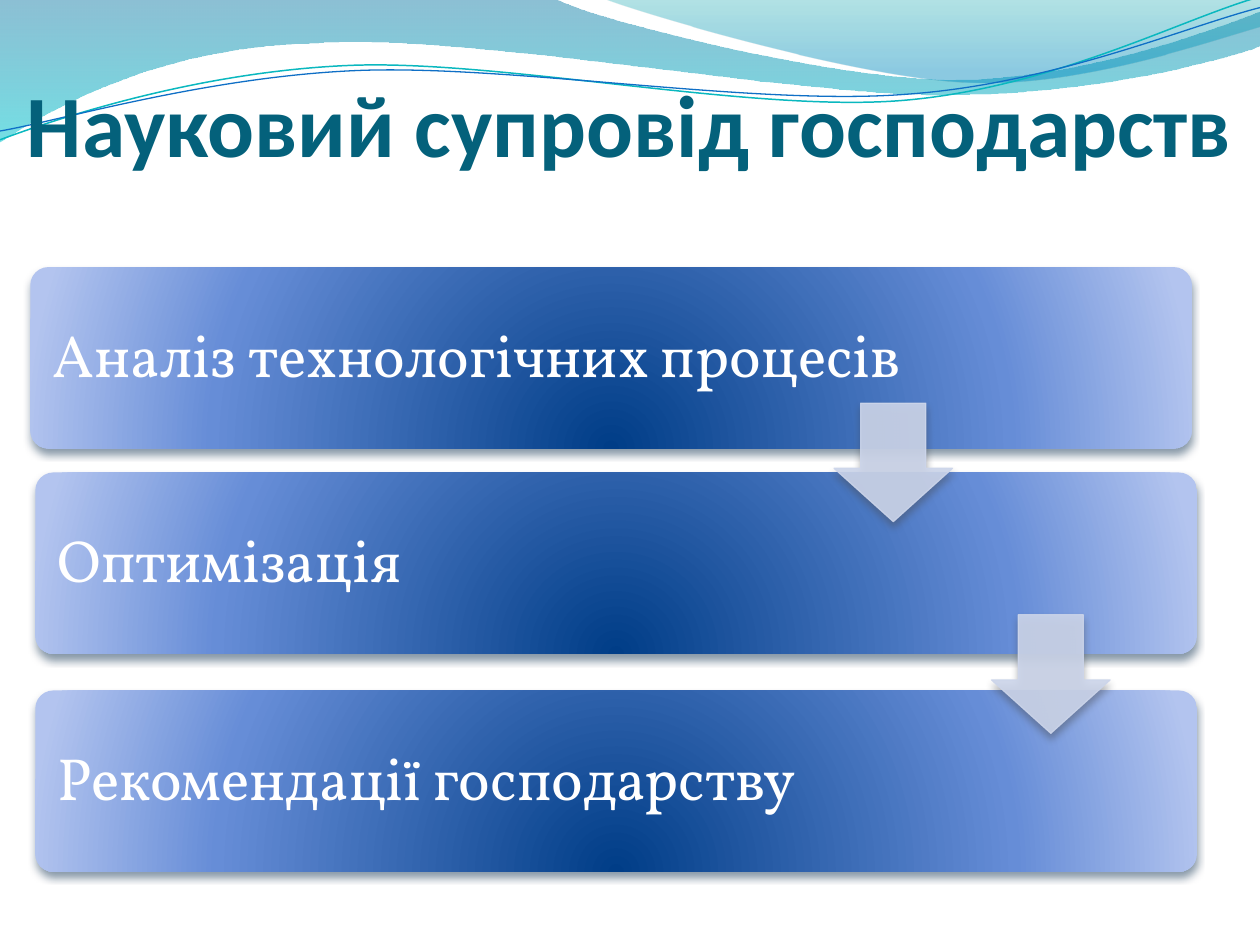
from math import cos, radians, sin

from lxml import etree
from pptx import Presentation
from pptx.dml.color import RGBColor as RGB
from pptx.enum.shapes import MSO_SHAPE as SHAPE
from pptx.enum.text import MSO_ANCHOR as ANCHOR, MSO_AUTO_SIZE as SIZE, PP_ALIGN as ALIGN
from pptx.oxml import parse_xml
from pptx.oxml.ns import nsdecls, qn
from pptx.util import Inches, Pt

WHITE = RGB(0xFF, 0xFF, 0xFF)
TITLE = RGB(0x04, 0x61, 0x7B)
ARROW = RGB(0xCC, 0xD5, 0xEA)
TEAL = RGB(0x0A, 0xB8, 0xBF)
BLUE = RGB(0x0F, 0x6F, 0xC6)
BAR_DARK = RGB(0x00, 0x3D, 0x87)
BAR_MID = RGB(0x66, 0x8D, 0xD7)
BAR_PALE = RGB(0xB3, 0xC4, 0xEF)
BAR_SHADE = RGB(0x04, 0x27, 0x47)
ARROW_SHADE = RGB(0x47, 0x4B, 0x53)

DOWN = '<a:lin ang="5400000" scaled="0"/>'
GLOW = ('<a:path path="circle"><a:fillToRect l="50000" t="130000" '
        'r="50000" b="-30000"/></a:path>')
BAR_STOPS = [(0, BAR_DARK, 100), (68, BAR_MID, 100), (100, BAR_PALE, 100)]
TURN = 357.3

# Each wave: box, then start point, cubic curves (6 numbers) or lines (2).
WAVES = [
    ((-0.01, -0.01, 10.02, 1.14),
     [(0, 0), (4.4, -0.01), (4.76, 0.17, 6.64, 0.63, 7.58, 0.63),
      (8.53, 0.63, 9.58, 0.26, 10, 0.09), (10.01, 0.36),
      (9.83, 0.44, 8.7, 0.76, 7.46, 0.75), (6.22, 0.75, 3.82, 0.28, 2.57, 0.34),
      (1.29, 0.36, 0.46, 0.83, -0.01, 1.13), (0, 0)],
     [(0, RGB(0x00, 0x74, 0xA1), 45), (100, RGB(0x00, 0xC6, 0xCF), 55)]),
    ((4.79, -0.01, 5.21, 0.7),
     [(4.79, -0.01), (5.09, 0.11, 6.82, 0.62, 7.69, 0.65),
      (8.56, 0.69, 9.61, 0.32, 10, 0.21), (10, 0), (4.79, -0.01)],
     [(0, RGB(0x00, 0xA1, 0xA9), 30), (80, RGB(0x00, 0x8B, 0xBF), 45)]),
]
LINES = [
    ((-0.02, 0.22, 10.02, 0.71),
     [(0, 1.11), (0.48, 0.93, 1.58, 0.57, 2.77, 0.52),
      (3.95, 0.47, 5.93, 0.89, 7.13, 0.8), (8.33, 0.71, 9.38, 0.15, 9.98, -0.02)],
     TEAL, 0.85),
    ((-0.02, 0.3, 10.03, 0.58),
     [(0, 1.04), (0.47, 0.96, 1.64, 0.61, 2.83, 0.56),
      (4.03, 0.51, 5.97, 0.84, 7.17, 0.75), (8.36, 0.67, 9.41, 0.21, 10, 0.06)],
     BLUE, 0.75),
]
STEPS = [  # left, top, text width, words
    (0.24, 2.12, 7.41, "Аналіз технологічних процесів"),
    (0.28, 3.75, 7.23, "Оптимізація"),
    (0.28, 5.48, 7.23, "Рекомендації господарству"),
]
ARROWS = [(6.62, 3.2), (7.87, 4.88)]


def style(obj, **vals):
    for name, val in vals.items():
        setattr(obj, name, val)


def blend(shape, stops, way):
    """Fill with a gradient of (position, colour, opacity) stops."""
    marks = "".join(
        f'<a:gs pos="{pos * 1000}"><a:srgbClr val="{hue}">'
        f'<a:alpha val="{alpha * 1000}"/></a:srgbClr></a:gs>'
        for pos, hue, alpha in stops)
    shape.fill.background()
    props = shape.element.spPr
    props.replace(props.find(qn("a:noFill")), parse_xml(
        f'<a:gradFill {nsdecls("a")} rotWithShape="1"><a:gsLst>{marks}</a:gsLst>'
        f'{way}</a:gradFill>'))


def shade(shape, hue):
    """Give the soft shadow that falls straight down."""
    shape.shadow.inherit = False
    shape.element.spPr.find(qn("a:effectLst")).append(parse_xml(
        f'<a:outerShdw {nsdecls("a")} blurRad="{Pt(4.5)}" dist="{Pt(3)}" '
        f'dir="5400000" rotWithShape="0"><a:srgbClr val="{hue}">'
        f'<a:alpha val="48000"/></a:srgbClr></a:outerShdw>'))


def outline(shapes, box, path, close, turn=0):
    """Draw a curved outline in its box; points are given as turned on the slide."""
    left, top, wide, high = box
    ca, sa = cos(radians(turn)), sin(radians(turn))

    def local(x, y):
        dx, dy = x - left - wide / 2, y - top - high / 2
        return Inches(dx * ca + dy * sa + wide / 2), Inches(dy * ca - dx * sa + high / 2)

    pen = shapes.build_freeform(0, 0)
    pen.add_line_segments([(Inches(wide), Inches(high))], close=close)
    shape = pen.convert_to_shape()
    style(shape, left=Inches(left), top=Inches(top), width=Inches(wide),
          height=Inches(high), rotation=turn)
    shape.shadow.inherit = False
    track = next(shape.element.spPr.iter(qn("a:path")))
    for old in track.findall(qn("a:lnTo")):
        track.remove(old)
    start = track.find(qn("a:moveTo"))[0]
    for key, val in zip("xy", local(*path[0])):
        start.set(key, str(val))
    spot = 1
    for part in path[1:]:
        node = etree.Element(qn("a:lnTo" if len(part) == 2 else "a:cubicBezTo"))
        for x, y in zip(part[::2], part[1::2]):
            px, py = local(x, y)
            etree.SubElement(node, qn("a:pt"), x=str(px), y=str(py))
        track.insert(spot, node)
        spot += 1
    return shape


def add_waves(shapes):
    for box, path, stops in WAVES:
        wave = outline(shapes, box, path, True)
        blend(wave, stops, DOWN)
        wave.line.fill.background()
    for box, path, hue, width in LINES:
        curve = outline(shapes, box, path, False, TURN)
        curve.fill.background()
        curve.line.color.rgb = hue
        curve.line.width = Pt(width)


def add_step(shapes, left, top, wide, words):
    bar = shapes.add_shape(SHAPE.ROUNDED_RECTANGLE, left, top, Inches(9.22), Inches(1.44))
    bar.adjustments[0] = 0.1
    blend(bar, BAR_STOPS, GLOW)
    bar.line.fill.background()
    shade(bar, BAR_SHADE)
    gap = Inches(0.04)
    frame = shapes.add_textbox(left + gap, top + gap, wide, Inches(1.36)).text_frame
    pad = Inches(0.14)
    style(frame, word_wrap=True, vertical_anchor=ANCHOR.MIDDLE, margin_left=pad,
          margin_right=pad, margin_top=pad, margin_bottom=pad)
    para = frame.paragraphs[0]
    style(para, text=words, line_spacing=0.9)
    font = para.runs[0].font
    style(font, size=Pt(34), name="Vollkorn")
    font.color.rgb = WHITE


def add_arrow(shapes, left, top):
    side = Inches(0.94)
    arrow = shapes.add_shape(SHAPE.DOWN_ARROW, left, top, side, side)
    arrow.adjustments[0], arrow.adjustments[1] = 0.55, 0.45
    arrow.fill.solid()
    arrow.fill.fore_color.rgb = ARROW
    arrow.line.color.rgb = ARROW
    arrow.line.width = Pt(0.75)
    for hue in arrow.element.spPr.iter(qn("a:srgbClr")):
        etree.SubElement(hue, qn("a:alpha")).set("val", "90000")
    shade(arrow, ARROW_SHADE)


def set_title(shapes, left, top, wide, high, words):
    title = shapes.title
    style(title, left=left, top=top, width=wide, height=high)
    frame = title.text_frame
    style(frame, auto_size=SIZE.NONE, word_wrap=True, vertical_anchor=ANCHOR.BOTTOM,
          margin_left=0, margin_right=0, margin_top=Inches(0.05), margin_bottom=0)
    para = frame.paragraphs[0]
    style(para, text=words, alignment=ALIGN.CENTER)
    font = para.runs[0].font
    style(font, size=Pt(50), name="Calibri", bold=True)
    font.color.rgb = TITLE
    title.element.getparent().append(title.element)  # bring to front


def main():
    deck = Presentation()
    style(deck, slide_width=Inches(10), slide_height=Inches(7.5))
    shapes = deck.slides.add_slide(deck.slide_layouts[5]).shapes
    add_waves(shapes)
    for left, top, wide, words in STEPS:
        add_step(shapes, Inches(left), Inches(top), Inches(wide), words)
    for left, top in ARROWS:
        add_arrow(shapes, Inches(left), Inches(top))
    set_title(shapes, 0, 0, Inches(10), Inches(1.39), "Науковий супровід господарств")
    deck.save("out.pptx")


if __name__ == "__main__":
    main()
